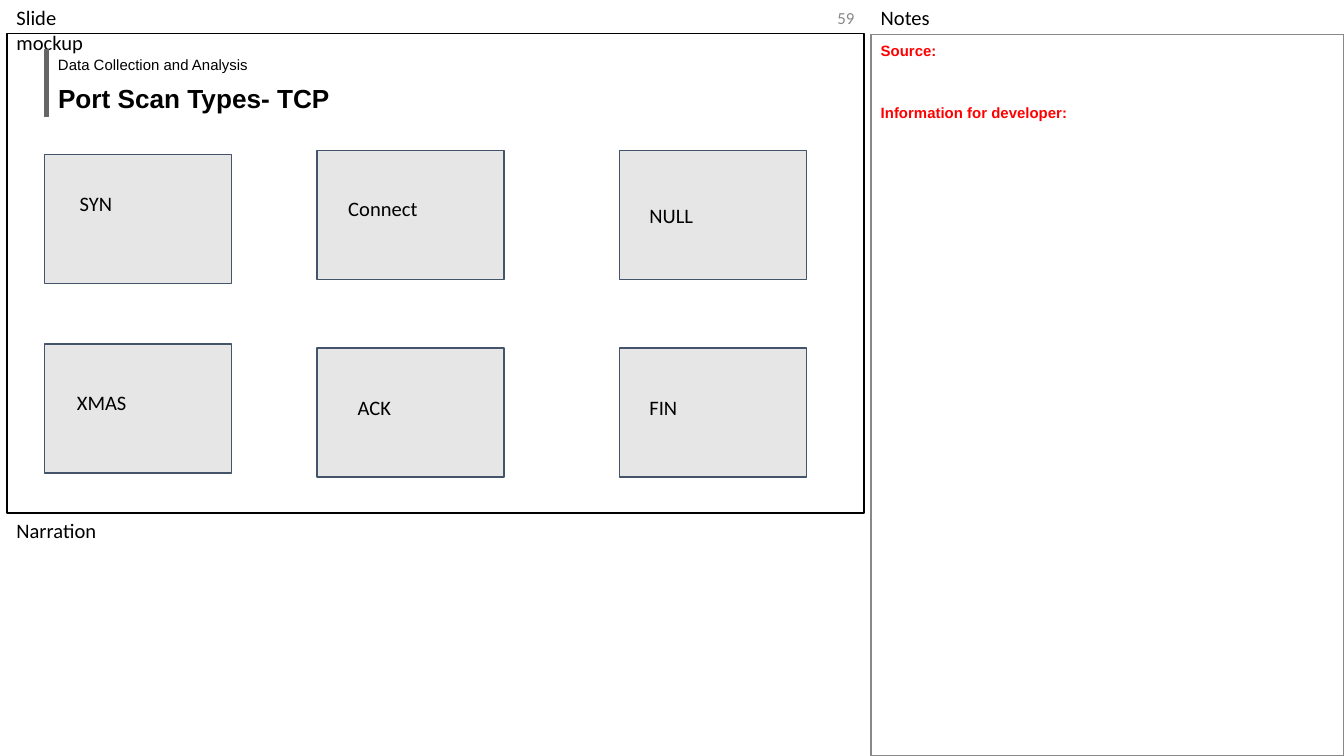
import pptx
import pptx.util
import pptx.dml.color
import pptx.enum.shapes
import pptx.enum.text

Pt = pptx.util.Pt
ALIGN = pptx.enum.text.PP_ALIGN
ANCHOR = pptx.enum.text.MSO_ANCHOR
AUTO_SIZE = pptx.enum.text.MSO_AUTO_SIZE

# Content; boxes are (left, top, width, height) in points
TITLE = ("Port Scan Types- TCP", (25.9, 38.9, 249.1, 21.6))
SECTION = ("Data Collection and Analysis", (25.9, 24.5, 249.1, 18.7))
PAGE_NUMBER = ("59", (314.6, 0, 148.3, 18.7))
PANE_LABELS = [
    ("Notes", (466.6, 0, 253.4, 18)),
    ("Narration", (3.6, 275, 257, 18)),
    ("Slide mockup", (3.6, 0, 69.1, 18)),
]
NOTES = (["Source:", "Information for developer:"], (466.6, 18.5, 253.4, 386.5))
MOCKUP_FRAME = (3.6, 18, 459.4, 257)
ACCENT_BAR = (23.8, 26.6, 2.2, 36)

# Column left, then (label, card top, label offset right, label offset down)
SCAN_COLUMNS = [
    (23.8, [("SYN", 82.8, 13.7, 14.4), ("XMAS", 184.3, 12.2, 19.4)]),
    (169.9, [("Connect", 80.6, 11.5, 19.4), ("ACK", 186.5, 16.6, 20.2)]),
    (331.9, [("NULL", 80.6, 10.8, 23), ("FIN", 186.5, 10.8, 20.2)]),
]
CARD_SIZE = (100.1, 69.1)
CARD_LABEL_SIZE = (72, 24.5)

THEME = {
    "black": "000000", "gray": "888888", "bar": "666666", "red": "FF0000",
    "card": "E7E6E6", "card_line": "44546A",
    "label": {"name": "Calibri", "size": Pt(11), "color": "black"},
    "page": {"name": "Calibri", "size": Pt(9), "color": "gray"},
    "title": {"name": "Arial", "size": Pt(14), "bold": True, "color": "black"},
    "section": {"name": "Arial", "size": Pt(8), "color": "black"},
    "notes": {"name": "Arial", "size": Pt(8), "bold": True, "color": "red"},
}
SIDE_INSET, SLIM_INSET, CARD_INSET = 5.2, 2.6, 5.2


def color(name):
    return pptx.dml.color.RGBColor.from_string(THEME[name])


def place(shape, box):
    for name, value in zip(("left", "top", "width", "height"), box):
        setattr(shape, name, Pt(value))


def write(shape, lines, style, inset, anchor=ANCHOR.TOP, **paragraph_format):
    frame = shape.text_frame
    frame_format = {
        "word_wrap": True, "auto_size": AUTO_SIZE.NONE, "vertical_anchor": anchor,
        "margin_left": Pt(SIDE_INSET), "margin_right": Pt(SIDE_INSET),
        "margin_top": Pt(inset), "margin_bottom": Pt(inset),
    }
    for name, value in frame_format.items():
        setattr(frame, name, value)
    frame.text = "\n".join(lines)
    for paragraph in frame.paragraphs:
        for name, value in {"alignment": ALIGN.LEFT, **paragraph_format}.items():
            setattr(paragraph, name, value)
        font = paragraph.runs[0].font
        for name, value in THEME[style].items():
            if name == "color":
                font.color.rgb = color(value)
            else:
                setattr(font, name, value)


def add_text(slide, text, box, style, inset, **text_format):
    shape = slide.shapes.add_textbox(*map(Pt, box))
    write(shape, [text], style, inset, **text_format)


def add_rectangle(slide, box, line, line_width=0.75, fill=None):
    kind = pptx.enum.shapes.MSO_SHAPE.RECTANGLE
    shape = slide.shapes.add_shape(kind, *map(Pt, box))
    shape.shadow.inherit = False
    if fill:
        shape.fill.solid()
        shape.fill.fore_color.rgb = color(fill)
    else:
        shape.fill.background()
    shape.line.color.rgb = color(line)
    shape.line.width = Pt(line_width)
    return shape


def main():
    presentation = pptx.Presentation()
    presentation.slide_width, presentation.slide_height = Pt(720), Pt(405)
    slide = presentation.slides.add_slide(presentation.slide_layouts[5])

    # Mockup frame and pane labels
    add_rectangle(slide, MOCKUP_FRAME, "black", 1)
    for text, box in PANE_LABELS:
        add_text(slide, text, box, "label", SLIM_INSET)
    add_text(slide, *PAGE_NUMBER, "page", SLIM_INSET,
             anchor=ANCHOR.MIDDLE, alignment=ALIGN.RIGHT)

    # Notes pane
    lines, box = NOTES
    notes = add_rectangle(slide, box, "gray")
    write(notes, lines, "notes", SLIM_INSET, line_spacing=1.15)
    notes.text_frame.paragraphs[1].space_before = Pt(21.8)

    # Heading
    add_rectangle(slide, ACCENT_BAR, "bar", fill="bar")
    text, box = TITLE
    place(slide.shapes.title, box)
    write(slide.shapes.title, [text], "title", CARD_INSET)
    add_text(slide, *SECTION, "section", CARD_INSET, space_after=Pt(8))

    # Scan type cards
    for left, cards in SCAN_COLUMNS:
        for label, top, right, down in cards:
            add_rectangle(slide, (left, top, *CARD_SIZE), "card_line", fill="card")
            label_box = (left + right, top + down, *CARD_LABEL_SIZE)
            add_text(slide, label, label_box, "label", CARD_INSET)

    presentation.save("out.pptx")


if __name__ == "__main__":
    main()
